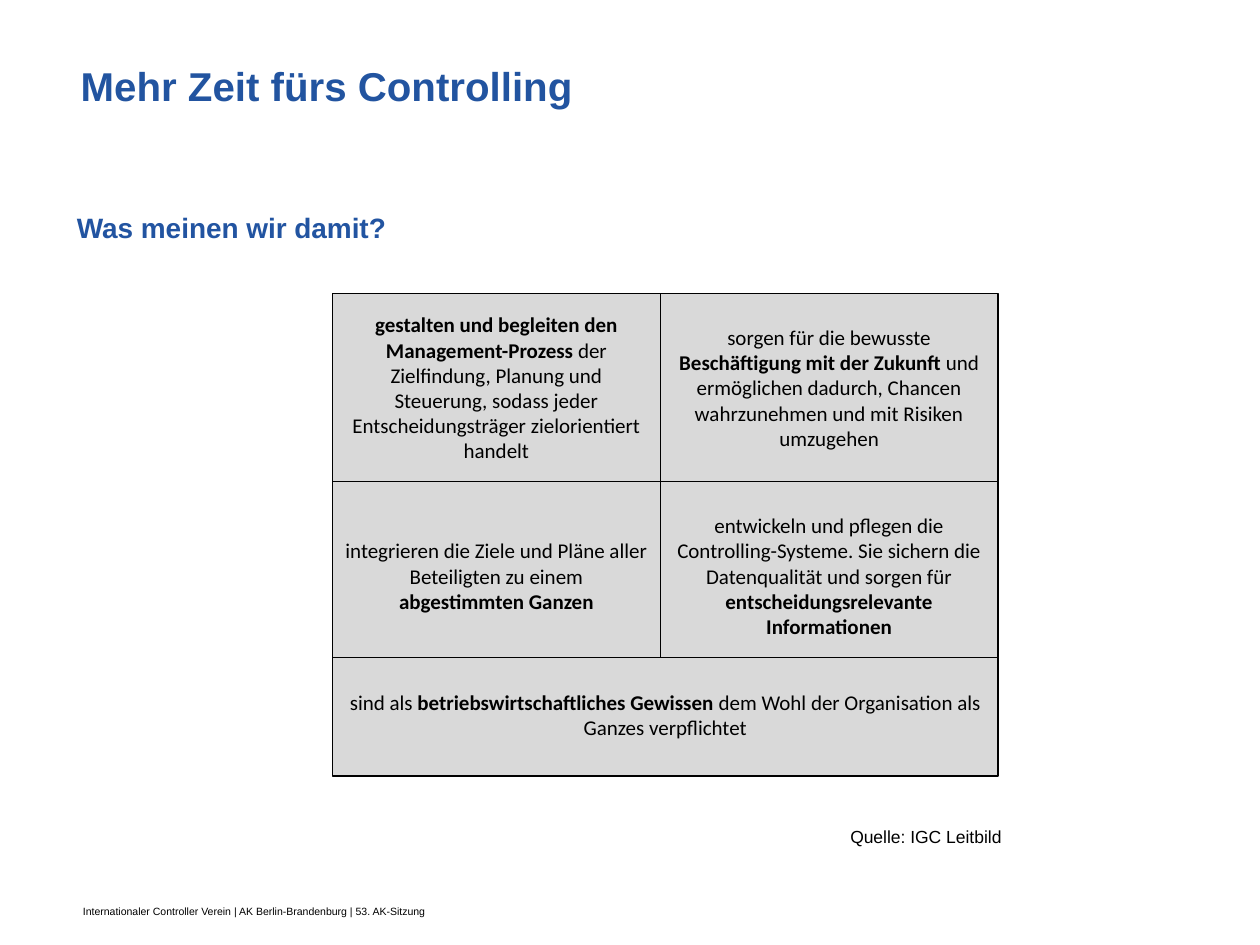
from typing import NamedTuple

from pptx import Presentation
from pptx.dml.color import RGBColor
from pptx.enum.shapes import MSO_SHAPE
from pptx.enum.text import MSO_ANCHOR as Anchor, MSO_AUTO_SIZE as AutoSize, PP_ALIGN as Align
from pptx.oxml.xmlchemy import OxmlElement
from pptx.util import Inches, Pt

COLORS = {"title": "2254A0", "subtitle": "2254A1", "text": "000000",
          "cell": "D9D9D9", "border": "000000"}

# Grid of the mission statement
LEFT, MIDDLE, RIGHT = 2.64, 5.24, 7.92
ROWS = [2.33, 3.82, 5.22, 6.16]
LINE_HEIGHT = 0.2


class Span(NamedTuple):
    text: str
    bold: bool = False


class Cell(NamedTuple):
    left: float
    right: float
    row: int
    spans: list[Span]
    lines_above: int | None = None  # None centres the text vertically


CELLS = [
    Cell(LEFT, MIDDLE, 0, [
        Span("gestalten und begleiten den Management-Prozess ", True),
        Span("der Zielfindung, Planung und Steuerung, sodass jeder "
             "Entscheidungsträger zielorientiert handelt")]),
    Cell(MIDDLE, RIGHT, 0, [
        Span("sorgen für die bewusste "),
        Span("Beschäftigung mit der Zukunft ", True),
        Span("und ermöglichen dadurch, Chancen wahrzunehmen und mit Risiken umzugehen")]),
    Cell(LEFT, MIDDLE, 1, [
        Span("integrieren die Ziele und Pläne aller Beteiligten zu einem "),
        Span("abgestimmten Ganzen", True)], 2),
    Cell(MIDDLE, RIGHT, 1, [
        Span("entwickeln und pflegen die Controlling-Systeme. Sie sichern die "
             "Datenqualität und sorgen für "),
        Span("entscheidungsrelevante Informationen", True)], 1),
    Cell(LEFT, RIGHT, 2, [
        Span("sind als "),
        Span("betriebswirtschaftliches Gewissen ", True),
        Span("dem Wohl der Organisation als Ganzes verpflichtet")], 1),
]


def color(name: str) -> RGBColor:
    return RGBColor.from_string(COLORS[name])


def style(para, size: float, color_name: str, font: str = "Arial",
          bold: bool | None = None) -> None:
    para.font.name = font
    para.font.size = Pt(size)
    para.font.bold = bold
    para.font.color.rgb = color(color_name)


def fill_placeholder(box, area: tuple, text: str, size: float, color_name: str):
    box.left, box.top, box.width, box.height = map(Inches, area)
    frame = box.text_frame
    frame.text = text
    frame.auto_size = AutoSize.NONE
    frame.vertical_anchor = Anchor.TOP
    para = frame.paragraphs[0]
    para.alignment = Align.LEFT
    return para


def add_label(page, area: tuple, text: str, size: float, wrap: bool) -> None:
    frame = page.shapes.add_textbox(*map(Inches, area)).text_frame
    frame.word_wrap = wrap
    frame.auto_size = AutoSize.SHAPE_TO_FIT_TEXT
    frame.text = text
    style(frame.paragraphs[0], size, "text")


def add_cell(page, cell: Cell) -> None:
    top, bottom = ROWS[cell.row:cell.row + 2]
    box = page.shapes.add_shape(
        MSO_SHAPE.RECTANGLE, Inches(cell.left), Inches(top),
        Inches(cell.right - cell.left), Inches(bottom - top))
    box.shadow.inherit = False
    box.fill.solid()
    box.fill.fore_color.rgb = color("cell")
    box.line.color.rgb = color("border")
    box.line.width = Pt(0.75)

    frame = box.text_frame
    frame.word_wrap = True
    if cell.lines_above is None:
        frame.vertical_anchor = Anchor.MIDDLE
    else:
        frame.vertical_anchor = Anchor.TOP
        frame.margin_top = Inches(0.05 + cell.lines_above * LINE_HEIGHT)
    para = frame.paragraphs[0]
    para.alignment = Align.CENTER
    style(para, 12, "text", "Calibri")
    for span in cell.spans:
        run = para.add_run()
        run.text = span.text
        run.font.bold = span.bold


def main() -> None:
    deck = Presentation()
    deck.slide_width, deck.slide_height = Inches(10), Inches(7.5)
    page = deck.slides.add_slide(deck.slide_layouts[1])

    # Title and question
    title = fill_placeholder(page.shapes.title, (0.54, 0.44, 7.01, 0.94),
                             "Mehr Zeit fürs Controlling", 23, "title")
    style(title, 23, "title", bold=True)
    question = fill_placeholder(page.placeholders[1], (0.51, 1.62, 5.2, 1.18),
                                "Was meinen wir damit?", 16, "subtitle")
    question.space_before = Pt(0)
    properties = question._p.get_or_add_pPr()
    properties.set("marL", str(Inches(0.38)))
    properties.set("indent", str(Inches(-0.38)))
    properties.append(OxmlElement("a:buNone"))
    style(question, 16, "subtitle", bold=True)

    # Mission statement
    for cell in CELLS:
        add_cell(page, cell)

    # Source and footer
    add_label(page, (6.65, 6.51, 1.97, 0.27), "Quelle: IGC Leitbild", 10, True)
    add_label(page, (0.56, 7.13, 2.94, 0.2),
              "Internationaler Controller Verein | AK Berlin-Brandenburg | 53. AK-Sitzung",
              6, False)

    deck.save("out.pptx")


if __name__ == "__main__":
    main()
